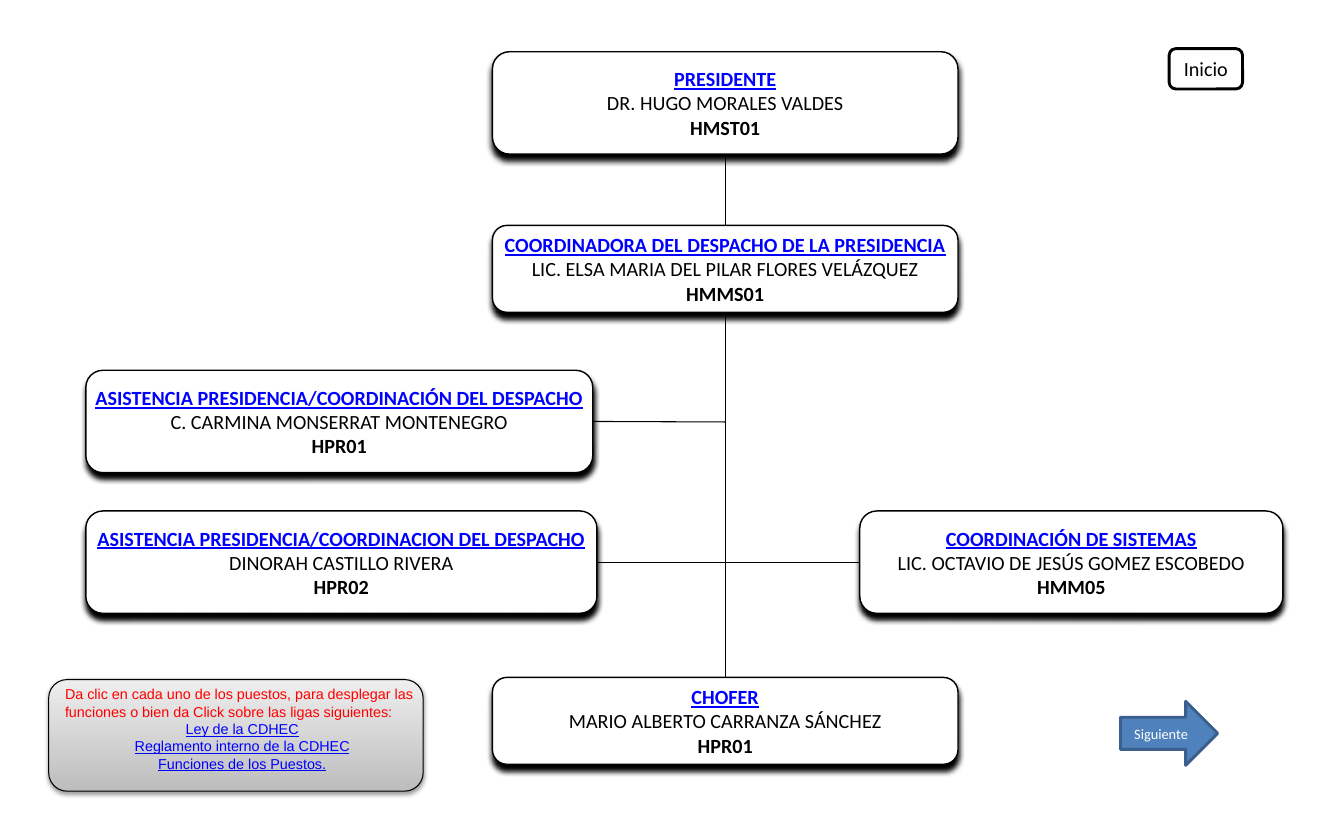
"""Organisation chart of the presidency office, with its navigation buttons."""
from lxml import etree
from pptx import Presentation
from pptx.dml.color import RGBColor
from pptx.enum.shapes import MSO_CONNECTOR, MSO_SHAPE
from pptx.enum.text import MSO_ANCHOR, PP_ALIGN
from pptx.oxml.ns import qn
from pptx.util import Inches, Pt

STRAIGHT = MSO_CONNECTOR.STRAIGHT
ROUNDED, ARROW = MSO_SHAPE.ROUNDED_RECTANGLE, MSO_SHAPE.RIGHT_ARROW
MIDDLE, CENTER, LEFT = MSO_ANCHOR.MIDDLE, PP_ALIGN.CENTER, PP_ALIGN.LEFT
TOP_SIDE, LEFT_SIDE, BOTTOM_SIDE, RIGHT_SIDE = range(4)
COLORS = {
    "black": "000000", "white": "FFFFFF", "link": "0000FF", "hint": "FF0000",
    "arrow": "4F81BD", "arrow_edge": "3A5F8C",
    "panel_dark": "BDBDBD", "panel_light": "EEEEEE",
}
RGB = {name: RGBColor.from_string(value) for name, value in COLORS.items()}


def add_line_of_text(frame, text, size, font, color, bold=False, underline=False, align=CENTER):
    first = frame.paragraphs[0]
    paragraph = frame.add_paragraph() if first.runs else first
    paragraph.alignment = align
    run = paragraph.add_run()
    run.text = text
    run.font.size = Pt(size)
    run.font.name = font
    run.font.color.rgb = RGB[color]
    run.font.bold = bold
    run.font.underline = underline


def add_shadow(shape, blur, distance, alpha):
    shape.shadow.inherit = False
    effects = shape._element.spPr.find(qn("a:effectLst"))
    outer = etree.SubElement(effects, qn("a:outerShdw"), blurRad=str(Pt(blur)),
                             dist=str(Pt(distance)), dir="5400000", rotWithShape="0")
    tint = etree.SubElement(outer, qn("a:srgbClr"), val=COLORS["black"])
    etree.SubElement(tint, qn("a:alpha"), val=str(alpha * 1000))


prs = Presentation()
prs.slide_width, prs.slide_height = Inches(12.99), Inches(7.88)
slide = prs.slides.add_slide(prs.slide_layouts[6])
shapes = slide.shapes

TRUNK_X, ASSISTANT_Y, SYSTEMS_Y = 7.01, 4.08, 5.43
branches = []
for x1, y1, x2, y2 in [
    (TRUNK_X, 1.49, TRUNK_X, 6.55),
    (5.73, ASSISTANT_Y, TRUNK_X, ASSISTANT_Y),
    (5.77, SYSTEMS_Y, 8.31, SYSTEMS_Y),
]:
    branch = shapes.add_connector(STRAIGHT, Inches(x1), Inches(y1), Inches(x2), Inches(y2))
    branch.line.color.rgb = RGB["black"]
    branch.line.width = Pt(0.75)
    etree.SubElement(branch._element.spPr, qn("a:effectLst"))
    branches.append(branch)
trunk, assistant_branch, systems_branch = branches

positions = [
    (4.76, 0.5, 4.5, 0.99, "PRESIDENTE", "DR. HUGO MORALES VALDES", "HMST01"),
    (4.76, 2.18, 4.5, 0.84, "COORDINADORA DEL DESPACHO DE LA PRESIDENCIA",
     "LIC. ELSA MARIA DEL PILAR FLORES VELÁZQUEZ", "HMMS01"),
    (4.76, 6.55, 4.5, 0.84, "CHOFER", "MARIO ALBERTO CARRANZA SÁNCHEZ", "HPR01"),
    (8.31, 4.94, 4.09, 0.99, "COORDINACIÓN DE SISTEMAS",
     "LIC. OCTAVIO DE JESÚS GOMEZ ESCOBEDO", "HMM05"),
    (0.83, 4.94, 4.94, 0.99, "ASISTENCIA PRESIDENCIA/COORDINACION DEL DESPACHO",
     "DINORAH CASTILLO RIVERA", "HPR02"),
    (0.83, 3.58, 4.9, 0.99, "ASISTENCIA PRESIDENCIA/COORDINACIÓN DEL DESPACHO",
     "C. CARMINA MONSERRAT MONTENEGRO", "HPR01"),
]
posts = []
for left, top, width, height, title, person, code in positions:
    post = shapes.add_shape(ROUNDED, Inches(left), Inches(top), Inches(width), Inches(height))
    post.fill.solid()
    post.fill.fore_color.rgb = RGB["white"]
    post.line.color.rgb = RGB["black"]
    post.line.width = Pt(1)
    add_shadow(post, 4, 4, 100)
    frame = post.text_frame
    frame.word_wrap = False
    frame.vertical_anchor = MIDDLE
    frame.margin_left = frame.margin_right = Inches(0.17)
    frame.margin_top = frame.margin_bottom = Inches(0.09)
    add_line_of_text(frame, title, 14, "Calibri", "link", bold=True, underline=True)
    add_line_of_text(frame, person, 14, "Calibri", "black")
    add_line_of_text(frame, code, 14, "Calibri", "black", bold=True)
    posts.append(post)
president, coordinator, driver, systems, second_assistant, first_assistant = posts

trunk.begin_connect(president, BOTTOM_SIDE)
trunk.end_connect(driver, TOP_SIDE)
assistant_branch.begin_connect(first_assistant, RIGHT_SIDE)
systems_branch.begin_connect(second_assistant, RIGHT_SIDE)
systems_branch.end_connect(systems, LEFT_SIDE)

for kind, left, top, width, height, label, size, fill, edge, ink in [
    (ROUNDED, 11.3, 0.47, 0.71, 0.39, "Inicio", 14, "white", "black", "black"),
    (ARROW, 10.83, 6.78, 0.94, 0.62, "Siguiente", 10, "arrow", "arrow_edge", "white"),
]:
    button = shapes.add_shape(kind, Inches(left), Inches(top), Inches(width), Inches(height))
    button.shadow.inherit = False
    button.fill.solid()
    button.fill.fore_color.rgb = RGB[fill]
    button.line.color.rgb = RGB[edge]
    button.line.width = Pt(2)
    button.text_frame.word_wrap = True
    button.text_frame.vertical_anchor = MIDDLE
    add_line_of_text(button.text_frame, label, size, "Calibri", ink)

panel = shapes.add_shape(ROUNDED, Inches(0.47), Inches(6.57), Inches(3.62), Inches(1.08))
panel.fill.gradient()
panel.fill.gradient_angle = 90
for stop, shade in zip(panel.fill.gradient_stops, ("panel_dark", "panel_light")):
    stop.color.rgb = RGB[shade]
panel.line.color.rgb = RGB["black"]
panel.line.width = Pt(0.75)
add_shadow(panel, 3.1, 1.6, 38)

help_text = shapes.add_textbox(Inches(0.53), Inches(6.58), Inches(3.62), Inches(0.94)).text_frame
help_text.word_wrap = True
add_line_of_text(help_text, "Da clic en cada uno de los puestos, para desplegar las funciones "
                 "o bien da Click sobre las ligas siguientes:", 10, "Arial", "hint", align=LEFT)
for link in ("Ley de la CDHEC", "Reglamento interno de la CDHEC", "Funciones de los Puestos."):
    add_line_of_text(help_text, link, 10, "Arial", "link", underline=True)

prs.save("out.pptx")
